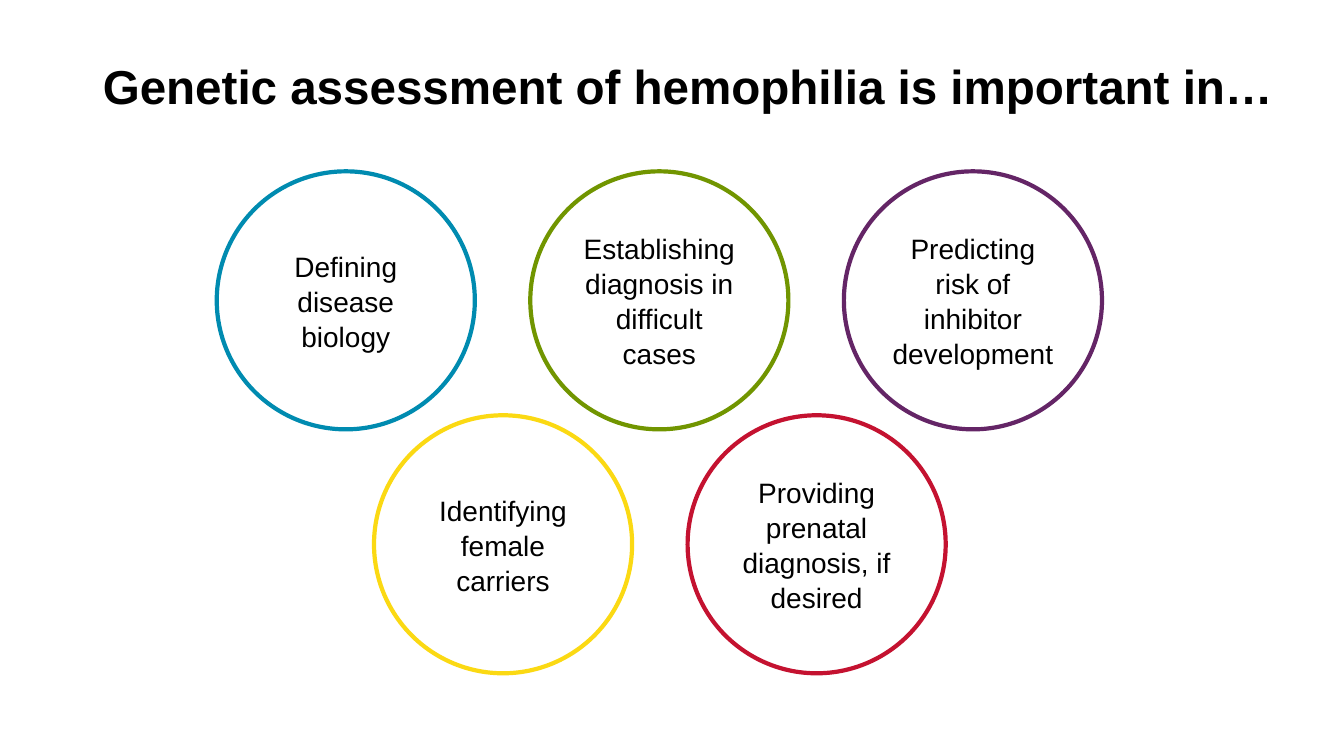
"""Build a slide with five ringed reasons for genetic assessment of hemophilia."""
from pptx import Presentation
from pptx import util as u
from pptx.dml.color import RGBColor
from pptx.enum import shapes, text

COLOURS = {
    "text": "000000",
    "background": "FFFFFF",
    "blue": "008BB0",
    "green": "719500",
    "purple": "642566",
    "yellow": "FBD913",
    "red": "C41230",
}
DIAMETER = 2.56
COLUMN_STEP = 3.11
ROWS = [
    (2.15, 1.7, [
        ("Defining disease biology", "blue"),
        ("Establishing diagnosis in difficult cases", "green"),
        ("Predicting risk of inhibitor development", "purple"),
    ]),
    (3.71, 4.12, [
        ("Identifying female carriers", "yellow"),
        ("Providing prenatal diagnosis, if desired", "red"),
    ]),
]


def colour(name):
    return RGBColor.from_string(COLOURS[name])


def write(frame, content, size, bold=False, align=text.PP_ALIGN.LEFT,
          inset=0.1, spacing=1.0):
    frame.word_wrap = True
    frame.auto_size = text.MSO_AUTO_SIZE.NONE
    frame.vertical_anchor = text.MSO_ANCHOR.MIDDLE
    frame.margin_left = frame.margin_right = u.Inches(inset)
    frame.margin_top = frame.margin_bottom = u.Inches(0.05)
    paragraph = frame.paragraphs[0]
    paragraph.alignment = align
    paragraph.line_spacing = spacing
    run = paragraph.add_run()
    run.text = content
    run.font.name = "Arial"
    run.font.size = u.Pt(size)
    run.font.bold = bold
    run.font.color.rgb = colour("text")


class SlideBuilder:
    def __init__(self, presentation):
        self.slide = presentation.slides.add_slide(presentation.slide_layouts[5])
        fill = self.slide.background.fill
        fill.solid()
        fill.fore_color.rgb = colour("background")

    def title(self, content, left, top, width, height):
        shape = self.slide.shapes.title
        shape.left, shape.top = u.Inches(left), u.Inches(top)
        shape.width, shape.height = u.Inches(width), u.Inches(height)
        write(shape.text_frame, content, size=34, bold=True)

    def ring(self, content, left, top, outline):
        shape = self.slide.shapes.add_shape(
            shapes.MSO_SHAPE.OVAL, u.Inches(left), u.Inches(top),
            u.Inches(DIAMETER), u.Inches(DIAMETER))
        shape.shadow.inherit = False
        shape.fill.solid()
        shape.fill.fore_color.rgb = colour("background")
        shape.line.color.rgb = colour(outline)
        shape.line.width = u.Pt(3)
        write(shape.text_frame, content, size=20, align=text.PP_ALIGN.CENTER,
              inset=0.09, spacing=1.04)


def main():
    presentation = Presentation()
    presentation.slide_width = u.Inches(13.33)
    presentation.slide_height = u.Inches(7.5)
    builder = SlideBuilder(presentation)
    builder.title("Genetic assessment of hemophilia is important in…",
                  0.92, 0.25, 12.11, 1.19)
    for left, top, reasons in ROWS:
        for column, (reason, outline) in enumerate(reasons):
            builder.ring(reason, left + column * COLUMN_STEP, top, outline)
    presentation.save("out.pptx")


if __name__ == "__main__":
    main()
